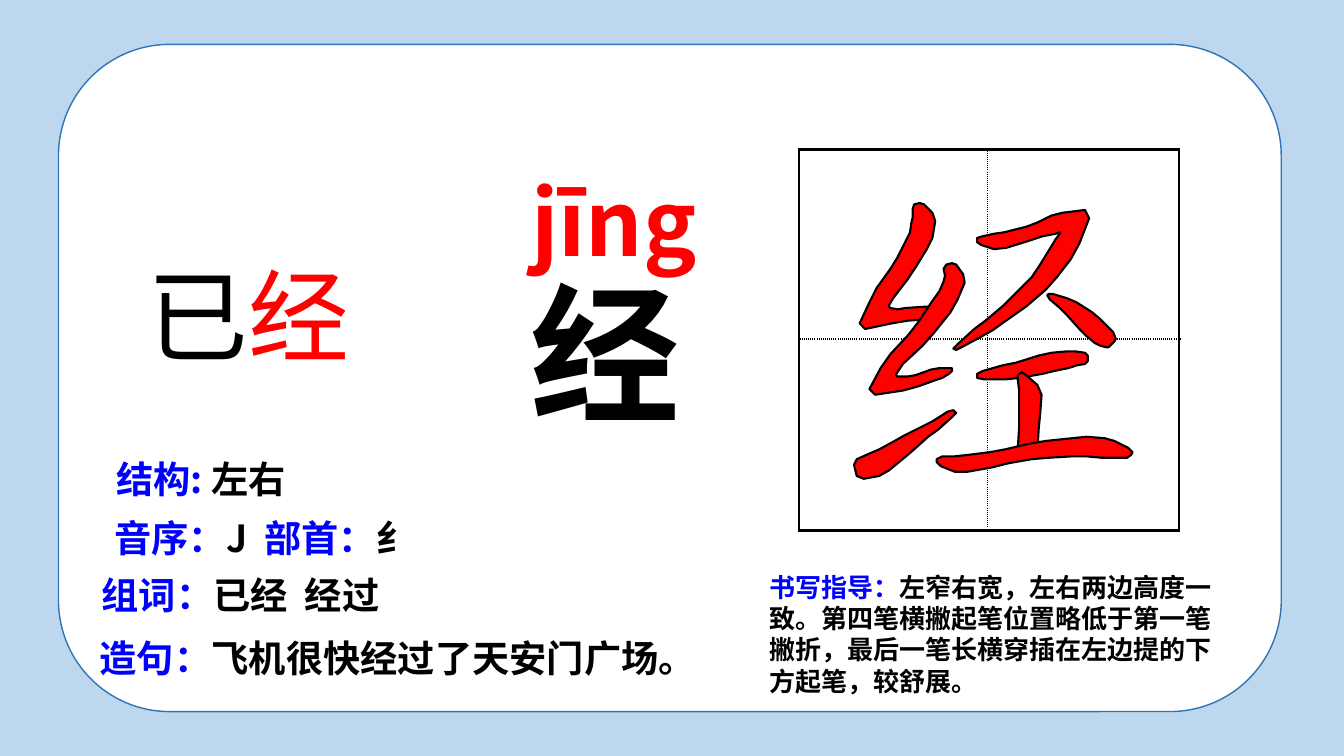
from math import hypot

from lxml import etree
from pptx import Presentation
from pptx.dml.color import RGBColor
from pptx.enum import shapes, text
from pptx.oxml.ns import qn
from pptx.util import Pt

SKY = RGBColor(0xBD, 0xD7, 0xEE)
EDGE_BLUE = RGBColor(0x2E, 0x75, 0xB6)
LABEL_BLUE = RGBColor(0x00, 0x00, 0xFF)
WHITE = RGBColor(0xFF, 0xFF, 0xFF)
BLACK = RGBColor(0x00, 0x00, 0x00)
RED = RGBColor(0xFF, 0x00, 0x00)

HANZI_FONT = "Noto Sans CJK SC"
PINYIN_FONT = "Noto Sans CJK JP"
LABEL_SIZE = 26.6
WORD_GAP = 6  # extra points after a space between words

# Path of the brush for each stroke: x, y and half the brush width, in points
BRUSH_PATHS = {
    "upper fold": [
        (655, 145.5, 3.5), (660, 155.5, 8.5), (657, 171, 8.5), (645, 191.5, 7.5),
        (629, 214.5, 7), (623.5, 227.5, 14), (643, 225.5, 4.5), (668, 222.5, 4.5)],
    "lower fold": [
        (678, 188.5, 4), (682.5, 198.5, 7.5), (676, 214, 7.5), (658, 238.5, 6.5),
        (636.5, 261.5, 5.5), (628.5, 276, 13), (651, 273, 4.5), (669.5, 267, 4),
        (680, 264, 1.5)],
    "rise": [
        (611, 336, 7), (628, 331, 9), (646, 319, 6.5), (664, 306, 4), (682, 294, 2)],
    "short bar": [
        (698, 268.5, 2.5), (722, 265.5, 5.5), (748.5, 259.5, 7), (766, 256, 6),
        (777, 256, 3)],
    "post": [
        (728.5, 267, 2), (736, 279, 8), (735.5, 300, 7.5), (733.5, 327, 6.5)],
    "long bar": [
        (669, 329, 2.5), (685.5, 332, 6.5), (713, 327.5, 5), (742, 321.5, 6),
        (772, 319, 7), (792, 320, 7), (808.5, 324, 2.5)],
    "bar and sweep": [
        (698, 171.5, 2.5), (713, 173, 6), (739, 165.5, 4.5), (755.5, 159, 7),
        (769, 158, 14), (761, 176, 8.5), (746, 198, 7), (724.5, 218.5, 5.5),
        (702, 235.5, 4), (682, 249.5, 1.5)],
    "dot": [
        (748.5, 210.5, 1), (762, 218, 5), (778.5, 232, 8), (789.5, 241, 7.5),
        (794, 246, 4)],
}


def unit_vector(start, end):
    dx, dy = end[0] - start[0], end[1] - start[1]
    length = hypot(dx, dy) or 1
    return dx / length, dy / length


def brush_outline(path):
    """Walk down one side of the brush path and back up the other."""
    one_side, other_side = [], []
    for i, (x, y, half_width) in enumerate(path):
        arriving = unit_vector(path[max(i - 1, 0)], path[i])
        leaving = unit_vector(path[i], path[min(i + 1, len(path) - 1)])
        heading = (arriving[0] + leaving[0], arriving[1] + leaving[1])
        along_x, along_y = unit_vector((0, 0), heading)
        one_side.append((x - along_y * half_width, y + along_x * half_width))
        other_side.append((x + along_y * half_width, y - along_x * half_width))
    return one_side + other_side[::-1]


def soften(corners, cut=0.2):
    """Cut every corner of a closed outline into two points."""
    softened = []
    for (x1, y1), (x2, y2) in zip(corners, corners[1:] + corners[:1]):
        for share in (cut, 1 - cut):
            softened.append((x1 + (x2 - x1) * share, y1 + (y2 - y1) * share))
    return softened


class CharacterCard:
    def __init__(self, slide):
        self.slide = slide
        slide.background.fill.solid()
        slide.background.fill.fore_color.rgb = SKY

    def paint(self, shape, fill, line, width):
        shape.shadow.inherit = False
        shape.fill.solid()
        shape.fill.fore_color.rgb = fill
        shape.line.color.rgb = line
        shape.line.width = Pt(width)

    def panel(self, *box):
        frame = self.slide.shapes.add_shape(
            shapes.MSO_SHAPE.ROUNDED_RECTANGLE, *map(Pt, box))
        self.paint(frame, WHITE, EDGE_BLUE, 1)

    def words(self, box, runs, size=LABEL_SIZE, bold=True, font=HANZI_FONT,
              centred=False, middle=False, wrap=True, spacing=None, left=7.2, top=3.6):
        """Add a one-paragraph box; runs are (wording, colour) pairs."""
        frame = self.slide.shapes.add_textbox(*map(Pt, box)).text_frame
        frame.word_wrap = wrap
        frame.margin_left, frame.margin_top = Pt(left), Pt(top)
        frame.vertical_anchor = text.MSO_ANCHOR.MIDDLE if middle else text.MSO_ANCHOR.TOP
        line = frame.paragraphs[0]
        line.alignment = text.PP_ALIGN.CENTER if centred else text.PP_ALIGN.LEFT
        if spacing:
            line.line_spacing = spacing
        for wording, colour in runs:
            run = line.add_run()
            run.text = wording
            run.font.size, run.font.bold, run.font.name = Pt(size), bold, font
            run.font.color.rgb = colour
            props = run._r.get_or_add_rPr()
            etree.SubElement(props, qn("a:ea")).set("typeface", font)
            if wording == " ":
                props.set("spc", str(WORD_GAP * 100))

    def writing_grid(self, box, columns, rows):
        """Add the practice square: solid outside, dotted inside."""
        grid = self.slide.shapes.add_table(len(rows), len(columns), *map(Pt, box)).table
        grid.first_row = grid.horz_banding = False
        for column, width in zip(grid.columns, columns):
            column.width = Pt(width)
        for row, height in zip(grid.rows, rows):
            row.height = Pt(height)
        for r in range(len(rows)):
            for c in range(len(columns)):
                cell = grid.cell(r, c)
                outer = {"L": c == 0, "R": c == len(columns) - 1,
                         "T": r == 0, "B": r == len(rows) - 1}
                for side, solid in outer.items():
                    self.border(cell, side, solid)
                cell.fill.background()

    def border(self, cell, side, solid):
        edge = etree.SubElement(cell._tc.get_or_add_tcPr(), qn(f"a:ln{side}"))
        edge.set("w", str(Pt(2.25 if solid else 1.5)))
        ink = etree.SubElement(edge, qn("a:solidFill"))
        etree.SubElement(ink, qn("a:srgbClr")).set("val", str(BLACK))
        etree.SubElement(edge, qn("a:prstDash")).set("val", "solid" if solid else "sysDot")

    def stroke(self, path):
        start, *rest = soften(brush_outline(path))
        brush = self.slide.shapes.build_freeform(*start, scale=Pt(1))
        brush.add_line_segments(rest, close=True)
        self.paint(brush.convert_to_shape(), RED, BLACK, 1.5)


def main():
    deck = Presentation()
    deck.slide_width, deck.slide_height = Pt(960), Pt(540)
    card = CharacterCard(deck.slides.add_slide(deck.slide_layouts[6]))

    card.panel(41.8, 31.7, 873.4, 476.6)
    card.writing_grid((570.7, 107, 271.5, 271.8), (134.7, 136.8), (135, 136.8))
    card.words((542.2, 404.6, 332.6, 120.2), [
        ("书写指导：", LABEL_BLUE),
        ("左窄右宽，左右两边高度一致。第四笔横撇起笔位置略低于第一笔撇折，"
         "最后一笔长横穿插在左边提的下方起笔，较舒展。", BLACK)], size=18.6)
    card.words((372.2, 182.9, 121.7, 136.8), [("经", BLACK)], size=106.7, wrap=False)
    card.words((328.3, 115.2, 193.7, 85), [("jīng", RED)], size=64,
               font=PINYIN_FONT, left=51, top=4.3)
    card.words((98.6, 177.8, 177.1, 94.3), [("已", BLACK), ("经", RED)],
               size=72, bold=False)
    card.words((65.5, 405.4, 318.2, 39.6), [
        ("组词：", LABEL_BLUE), ("已经", BLACK), (" ", BLACK), ("经过", BLACK)])
    card.words((64.1, 434.2, 445.7, 55.4), [
        ("造句：", LABEL_BLUE), ("飞机很快经过了天安门广场。", BLACK)], spacing=1.5)
    card.words((58.3, 363.6, 260.6, 72), [
        ("音序：", LABEL_BLUE), ("J", BLACK), (" ", BLACK),
        ("部首：", LABEL_BLUE), ("纟", BLACK)], centred=True, top=4.3)
    card.words((34.6, 321.8, 218.2, 39.6), [
        ("结构: ", LABEL_BLUE), ("左右", BLACK)], centred=True, middle=True)
    for path in BRUSH_PATHS.values():
        card.stroke(path)

    deck.save("out.pptx")


if __name__ == "__main__":
    main()
